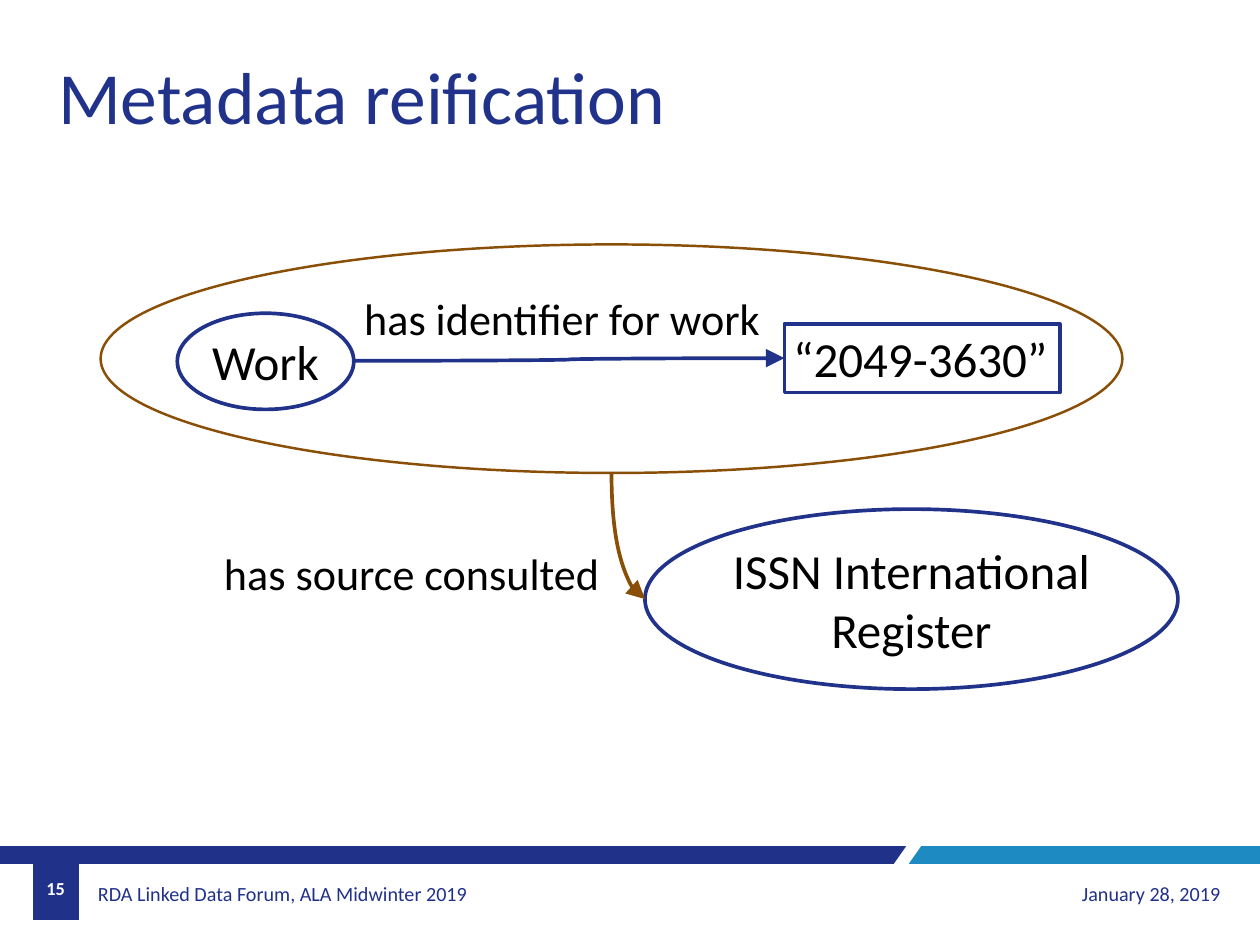
from lxml import etree
from pptx import Presentation
from pptx import util as u
from pptx.dml.color import RGBColor
from pptx.enum import shapes, text
from pptx.oxml.ns import qn

COLORS = {"navy": "203189", "blue": "1D8BC1", "ink": "21328A",
          "brown": "8A4F06", "black": "000000", "white": "FFFFFF"}
LEFT, CENTER, RIGHT = text.PP_ALIGN.LEFT, text.PP_ALIGN.CENTER, text.PP_ALIGN.RIGHT
OVAL, RECT = shapes.MSO_SHAPE.OVAL, shapes.MSO_SHAPE.RECTANGLE


def rgb(name):
    return RGBColor.from_string(COLORS[name])


def write(sp, lines, size, color="black", align=LEFT, bold=False, wrap=False):
    tf = sp.text_frame
    tf.word_wrap = wrap
    tf.vertical_anchor = text.MSO_ANCHOR.MIDDLE
    for i, line in enumerate(lines):
        p = tf.paragraphs[0] if i == 0 else tf.add_paragraph()
        p.alignment = align
        r = p.add_run()
        r.text = line
        r.font.name = "Calibri"
        r.font.size = u.Pt(size)
        r.font.bold = bold
        r.font.color.rgb = rgb(color)
    return sp


def label(s, box, line, size, color="black", align=LEFT, bold=False, wrap=False):
    sp = s.shapes.add_textbox(*map(u.Inches, box))
    return write(sp, [line], size, color, align, bold, wrap)


def outline(s, kind, box, color, width):
    sp = s.shapes.add_shape(kind, *map(u.Inches, box))
    sp.shadow.inherit = False
    sp.fill.background()
    sp.line.color.rgb = rgb(color)
    sp.line.width = u.Pt(width)
    return sp


def solid(s, points, color):
    corners = [(u.Inches(x), u.Inches(y)) for x, y in points]
    fb = s.shapes.build_freeform(*corners[0])
    fb.add_line_segments(corners[1:], close=True)
    sp = fb.convert_to_shape()
    sp.shadow.inherit = False
    sp.fill.solid()
    sp.fill.fore_color.rgb = rgb(color)
    sp.line.fill.background()


def curve(s, start, end, color):
    c = s.shapes.add_connector(shapes.MSO_CONNECTOR.CURVE, *map(u.Inches, start + end))
    c.line.color.rgb = rgb(color)
    c.line.width = u.Pt(3)
    sp_pr = c._element.spPr
    etree.SubElement(sp_pr.find(qn("a:ln")), qn("a:tailEnd"),
                     type="triangle", w="lg", len="lg")
    etree.SubElement(sp_pr, qn("a:effectLst"))
    return sp_pr


def drop_curve(s, start, end, color):
    (x1, y1), (x2, y2) = start, end
    cx, cy = (x1 + x2) / 2, (y1 + y2) / 2
    half_w, half_h = (y2 - y1) / 2, (x2 - x1) / 2
    sp_pr = curve(s, (cx + half_w, cy - half_h), (cx - half_w, cy + half_h), color)
    sp_pr.find(qn("a:xfrm")).set("rot", str(270 * 60000))
    sp_pr.find(qn("a:prstGeom")).set("prst", "curvedConnector2")


def title(s, box):
    label(s, box, "Metadata reification", 60, "ink")


def statement(s, box):
    x, y, w, h = box
    outline(s, OVAL, box, "brown", 2)
    work = outline(s, OVAL, (x + 0.87, y + 0.78, 2, 1.09), "ink", 3)
    write(work, ["Work"], 40, align=CENTER)
    curve(s, (x + 2.87, y + 1.32), (x + 7.75, y + 1.29), "ink")
    value = outline(s, RECT, (x + 7.75, y + 0.9, 3.12, 0.78), "ink", 3)
    write(value, ["“2049-3630”"], 40, wrap=True)
    label(s, (x + 2.89, y + 0.48, 4.73, 0.71), "has identifier for work", 36)
    return x + w / 2, y + h


def source(s, box, start):
    x, y, w, h = box
    register = outline(s, OVAL, box, "ink", 3)
    write(register, ["ISSN International", "Register"], 40, align=CENTER)
    label(s, (x - 4.87, y + 0.37, 4.49, 0.71), "has source consulted", 36)
    drop_curve(s, start, (x, y + h / 2), "brown")


def footer(s, box):
    x, y, w, h = box
    bar, slant, split = y + 0.2, 0.14, x + 10.27
    solid(s, [(split, y), (x, y), (x, bar), (split - slant, bar)], "navy")
    gap = split + 0.03
    solid(s, [(x + w, y), (gap + slant, y), (gap, bar), (x + w, bar)], "blue")
    tab, tab_w = x + 0.37, 0.52
    solid(s, [(tab, y), (tab + tab_w, y), (tab + tab_w, y + h), (tab, y + h)], "navy")
    event = label(s, (x + 1.04, y + 0.26, 4.6, 0.55),
                  "RDA Linked Data Forum, ALA Midwinter 2019", 16.4, "navy")
    event.text_frame.margin_left = u.Inches(0.07)
    label(s, (split, y + 0.26, 3.66, 0.55), "January 28, 2019", 16.4, "navy", RIGHT, wrap=True)
    label(s, (tab, bar, tab_w, 0.55), "15", 14.9, "white", CENTER, True)


def main():
    prs = Presentation()
    prs.slide_width, prs.slide_height = u.Inches(14.28), u.Inches(10.71)
    s = prs.slides.add_slide(prs.slide_layouts[6])
    footer(s, (0, 9.59, 14.28, 0.84))
    start = statement(s, (1.14, 2.77, 11.58, 2.59))
    source(s, (7.31, 5.77, 6.04, 2.04), start)
    title(s, (0.56, 0.52, 7.22, 1.11))
    prs.save("out.pptx")


if __name__ == "__main__":
    main()
